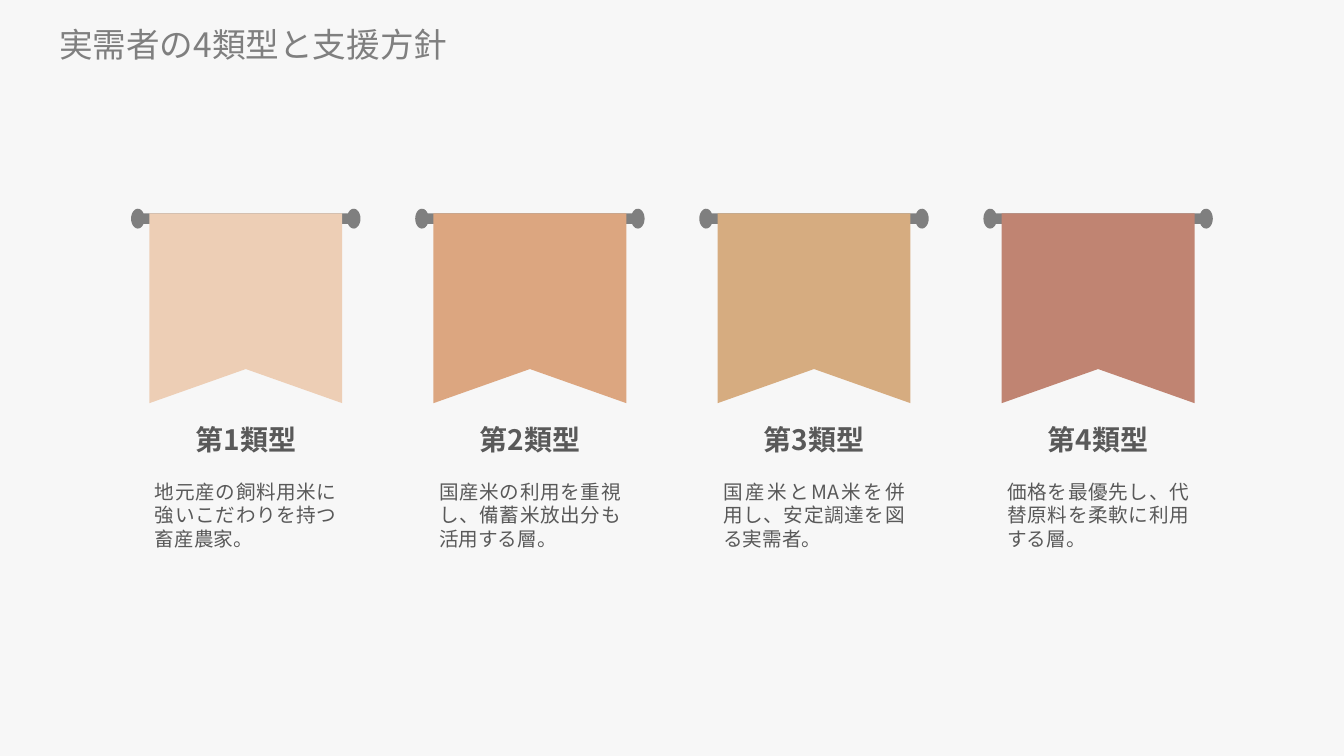
from math import asin, cos, sin

from lxml import etree
from pptx import Presentation
from pptx.dml.color import RGBColor
from pptx.enum import text
from pptx.oxml.ns import qn
from pptx.util import Cm, Pt

TITLE = "実需者の4類型と支援方針"
TYPES = [
    ("第1類型", "地元産の飼料用米に強いこだわりを持つ畜産農家。", "peach"),
    ("第2類型", "国産米の利用を重視し、備蓄米放出分も活用する層。", "orange"),
    ("第3類型", "国産米とMA米を併用し、安定調達を図る実需者。", "sand"),
    ("第4類型", "価格を最優先し、代替原料を柔軟に利用する層。", "brick"),
]
HEX = {
    "back": "F7F7F7", "gray": "7F7F7F", "text": "595959",
    "peach": "EDCEB5", "orange": "DCA680", "sand": "D6AC80", "brick": "C08472",
}
FONT = "Noto Sans CJK SC"
ALIGN = text.PP_ALIGN

# Lengths in centimetres
WIDE, HIGH = 33.87, 19.05
PITCH = 7.16
ROD_Y, BAR = 5.51, 0.13                  # rod centre line, half thickness
KNOB_X, KNOB_W, KNOB_H = 2.72, 0.17, 0.25  # offset and radii of the knobs
FLAG_W, TOP, NOTCH, TIP = 4.86, 5.38, 9.3, 10.16
STEPS = 24


def color(name):
    return RGBColor.from_string(HEX[name])


def write(box, words, size, tint, align, bold=False):
    frame = box.text_frame
    frame.word_wrap = True
    frame.auto_size = text.MSO_AUTO_SIZE.NONE
    frame.vertical_anchor = text.MSO_ANCHOR.TOP
    frame.margin_left = frame.margin_right = Cm(0.25)
    frame.margin_top, frame.margin_bottom = Cm(0.13), 0
    frame.text = words
    para = frame.paragraphs[0]
    para.alignment = align
    font = para.font
    font.name, font.size, font.bold = FONT, Pt(size), bold
    font.color.rgb = color(tint)
    # East Asian glyphs take their typeface from a:ea
    props = para._p.pPr.find(qn("a:defRPr"))
    etree.SubElement(props, qn("a:ea")).set("typeface", FONT)


def label(mid, top, width, height, *style):
    """Add a text box centred on mid."""
    box = slide.shapes.add_textbox(
        Cm(mid - width / 2), Cm(top), Cm(width), Cm(height))
    write(box, *style)


def draw(group, points, tint):
    """Add a closed, filled outline to the group."""
    spots = [(Cm(x), Cm(y)) for x, y in points]
    pen = group.shapes.build_freeform(*spots[0])
    pen.add_line_segments(spots[1:], close=True)
    shape = pen.convert_to_shape()
    shape.shadow.inherit = False
    shape.fill.solid()
    shape.fill.fore_color.rgb = color(tint)
    shape.line.fill.background()


def rod(mid):
    """Trace a bar that ends in an oval knob on each side."""
    reach = asin(-1) * -2 - asin(BAR / KNOB_H)  # angle where knob meets bar
    turns = [reach * (2 * i / STEPS - 1) for i in range(STEPS + 1)]
    arc = [(KNOB_X + KNOB_W * cos(a), KNOB_H * sin(a)) for a in turns]
    return [(mid + side * x, ROD_Y + side * y)
            for side in (1, -1) for x, y in arc]


def flag(mid):
    left, right = mid - FLAG_W / 2, mid + FLAG_W / 2
    return [(left, TOP), (right, TOP), (right, TIP), (mid, NOTCH), (left, TIP)]


deck = Presentation()
deck.slide_width, deck.slide_height = Cm(WIDE), Cm(HIGH)
slide = deck.slides.add_slide(deck.slide_layouts[5])
slide.background.fill.solid()
slide.background.fill.fore_color.rgb = color("back")

head = slide.shapes.title
head.left, head.top, head.width, head.height = Cm(1.24), Cm(0.46), Cm(29.57), Cm(1.27)
write(head, TITLE, 24, "gray", ALIGN.LEFT)

for i, (name, note, tint) in enumerate(TYPES):
    mid = WIDE / 2 + (i - (len(TYPES) - 1) / 2) * PITCH
    banner = slide.shapes.add_group_shape()
    draw(banner, rod(mid), "gray")
    draw(banner, flag(mid), tint)
    label(mid, 10.52, 3.68, 1.12, name, 20, "text", ALIGN.CENTER, True)
    label(mid, 11.96, 5.08, 3.12, note, 14, "text", ALIGN.JUSTIFY)

deck.save("out.pptx")
